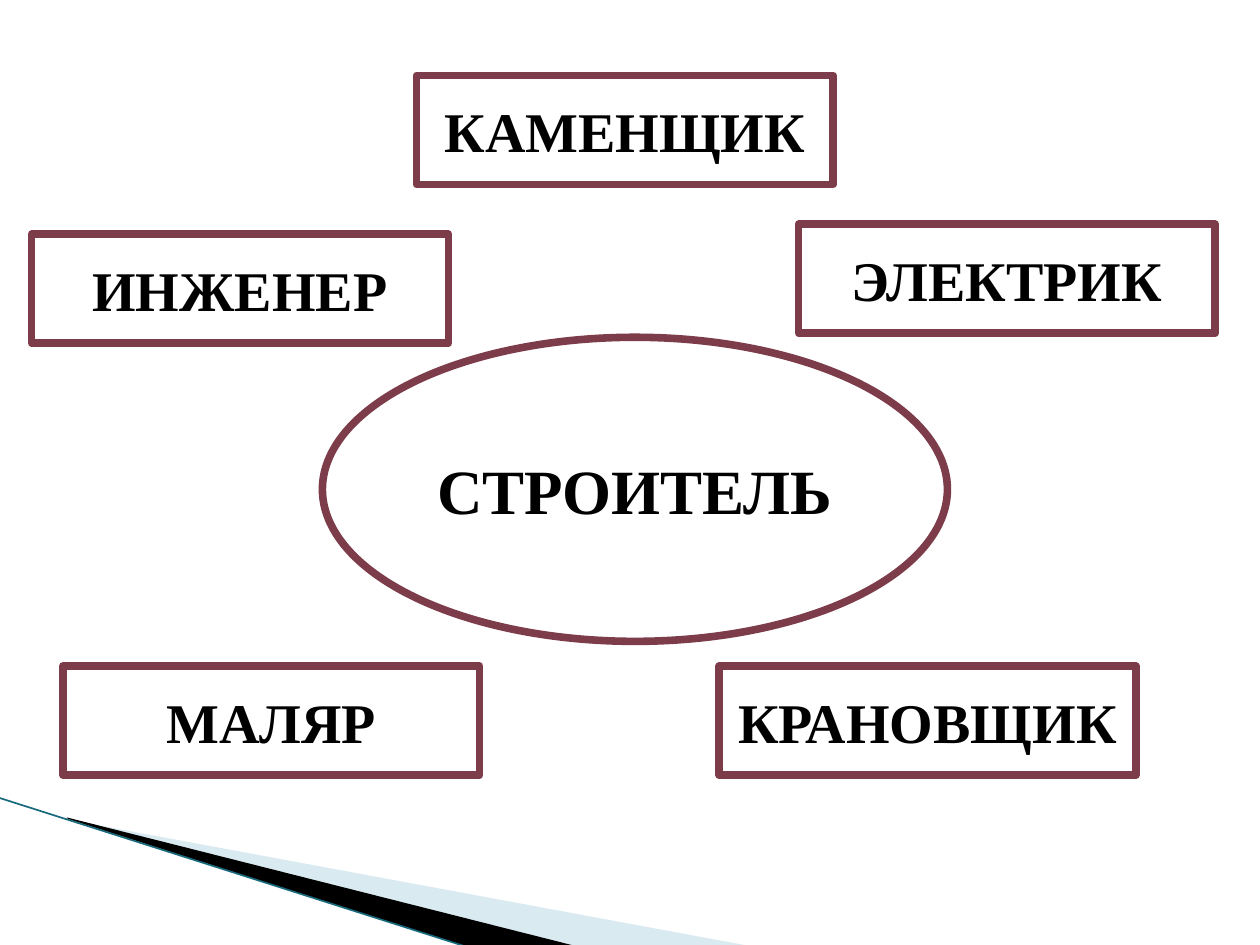
from dataclasses import dataclass

from lxml.etree import SubElement
from pptx import Presentation
from pptx.dml.color import RGBColor
from pptx.enum.shapes import MSO_CONNECTOR as Connector, MSO_SHAPE as Preset
from pptx.enum.text import MSO_ANCHOR as Anchor, PP_ALIGN as Align
from pptx.oxml.ns import qn
from pptx.slide import Slide
from pptx.util import Cm, Pt


def color(value):
    return RGBColor.from_string(value)


@dataclass
class SlideBuilder:
    """Draws styled elements on the current slide."""

    page: Slide
    font: str = "Times New Roman"
    ink: str = "000000"
    paper: str = "FFFFFF"
    border: str = "7D3C4A"
    border_width: float = 4.33

    def label(self, preset, text, left, top, width, height, size):
        box = self.page.shapes.add_shape(preset, Cm(left), Cm(top), Cm(width), Cm(height))
        box.shadow.inherit = False
        box.fill.solid()
        box.fill.fore_color.rgb = color(self.paper)
        box.line.color.rgb = color(self.border)
        box.line.width = Pt(self.border_width)
        frame = box.text_frame
        frame.word_wrap = True
        frame.vertical_anchor = Anchor.MIDDLE
        para = frame.paragraphs[0]
        para.alignment = Align.CENTER
        span = para.add_run()
        span.text = text
        span.font.name = self.font
        span.font.size = Pt(size)
        span.font.bold = True
        span.font.color.rgb = color(self.ink)

    def wedge(self, points, fill, opacity=100):
        start, *rest = [(Cm(x), Cm(y)) for x, y in points]
        outline = self.page.shapes.build_freeform(*start)
        outline.add_line_segments(rest, close=True)
        shape = outline.convert_to_shape()
        shape.shadow.inherit = False
        shape.line.fill.background()
        shape.fill.solid()
        shape.fill.fore_color.rgb = color(fill)
        if opacity < 100:
            tint = shape.fill._xPr.find(f".//{qn('a:srgbClr')}")
            SubElement(tint, qn("a:alpha"), val=str(opacity * 1000))

    def line(self, start, end, stroke, width):
        ends = [Cm(value) for value in (*start, *end)]
        connector = self.page.shapes.add_connector(Connector.STRAIGHT, *ends)
        connector.line.color.rgb = color(stroke)
        connector.line.width = Pt(width)
        SubElement(connector._element.spPr, qn("a:effectLst"))


def main():
    deck = Presentation()
    deck.slide_width, deck.slide_height = Cm(25.4), Cm(19.05)
    builder = SlideBuilder(deck.slides.add_slide(deck.slide_layouts[6]))

    builder.wedge([(1.4, 16.53), (15.11, 19.07), (11.58, 19.07), (1.4, 16.51)], "A0CBDC", 40)
    builder.wedge([(1.35, 16.48), (11.6, 19.07), (9.45, 19.1), (1.37, 16.51)], "000000")
    builder.line((-0.03, 16.08), (9.45, 19.1), "17697B", 0.95)

    builder.label(Preset.OVAL, "СТРОИТЕЛЬ", 6.5, 6.8, 12.6, 6.13, 36)
    trades = [
        ("КАМЕНЩИК", 8.4, 1.52),
        ("ИНЖЕНЕР", 0.64, 4.72),
        ("МАЛЯР", 1.27, 13.43),
        ("КРАНОВЩИК", 14.5, 13.43),
        ("ЭЛЕКТРИК", 16.1, 4.52),
    ]
    for trade, left, top in trades:
        builder.label(Preset.RECTANGLE, trade, left, top, 8.4, 2.2, 32)

    deck.save("out.pptx")


if __name__ == "__main__":
    main()
